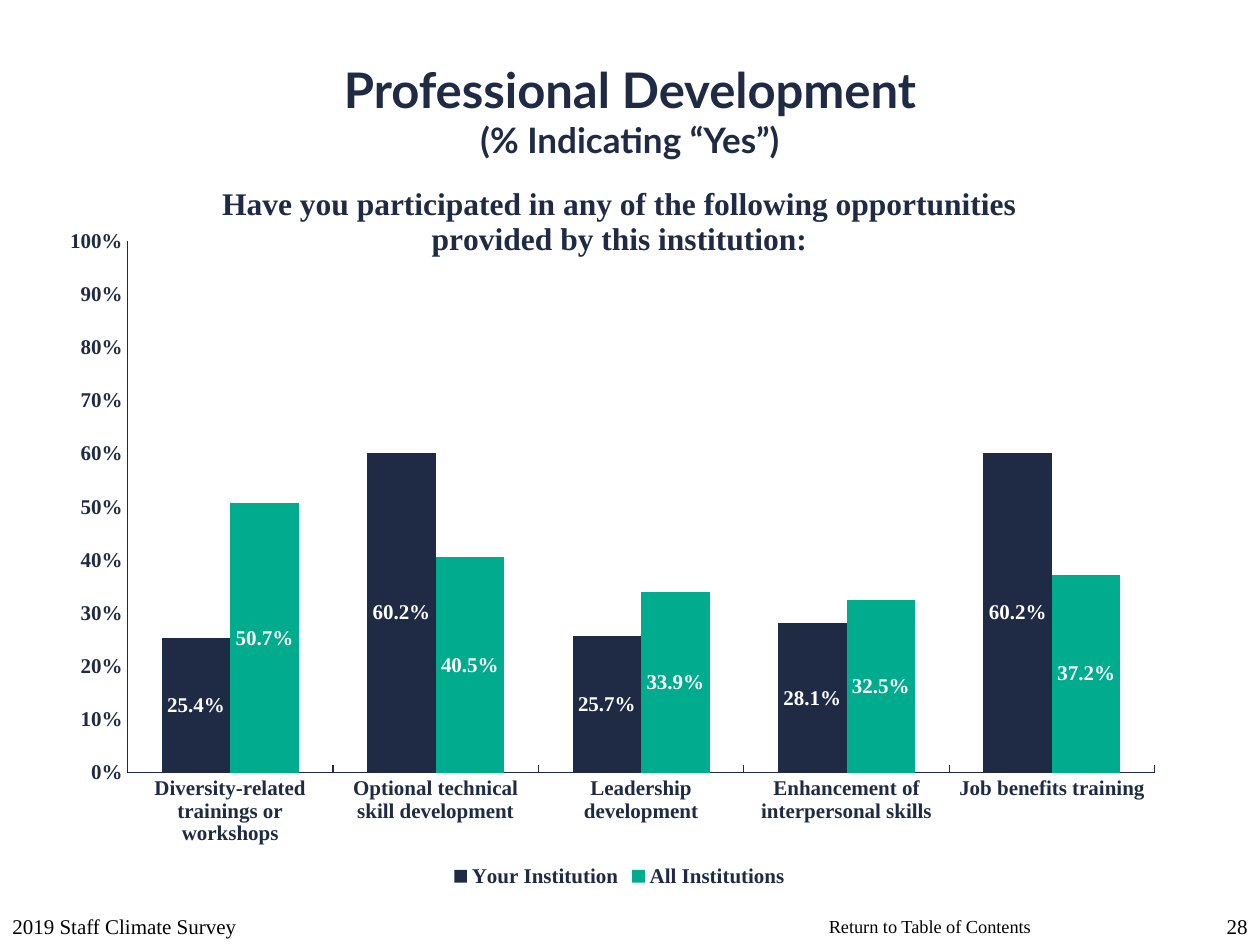
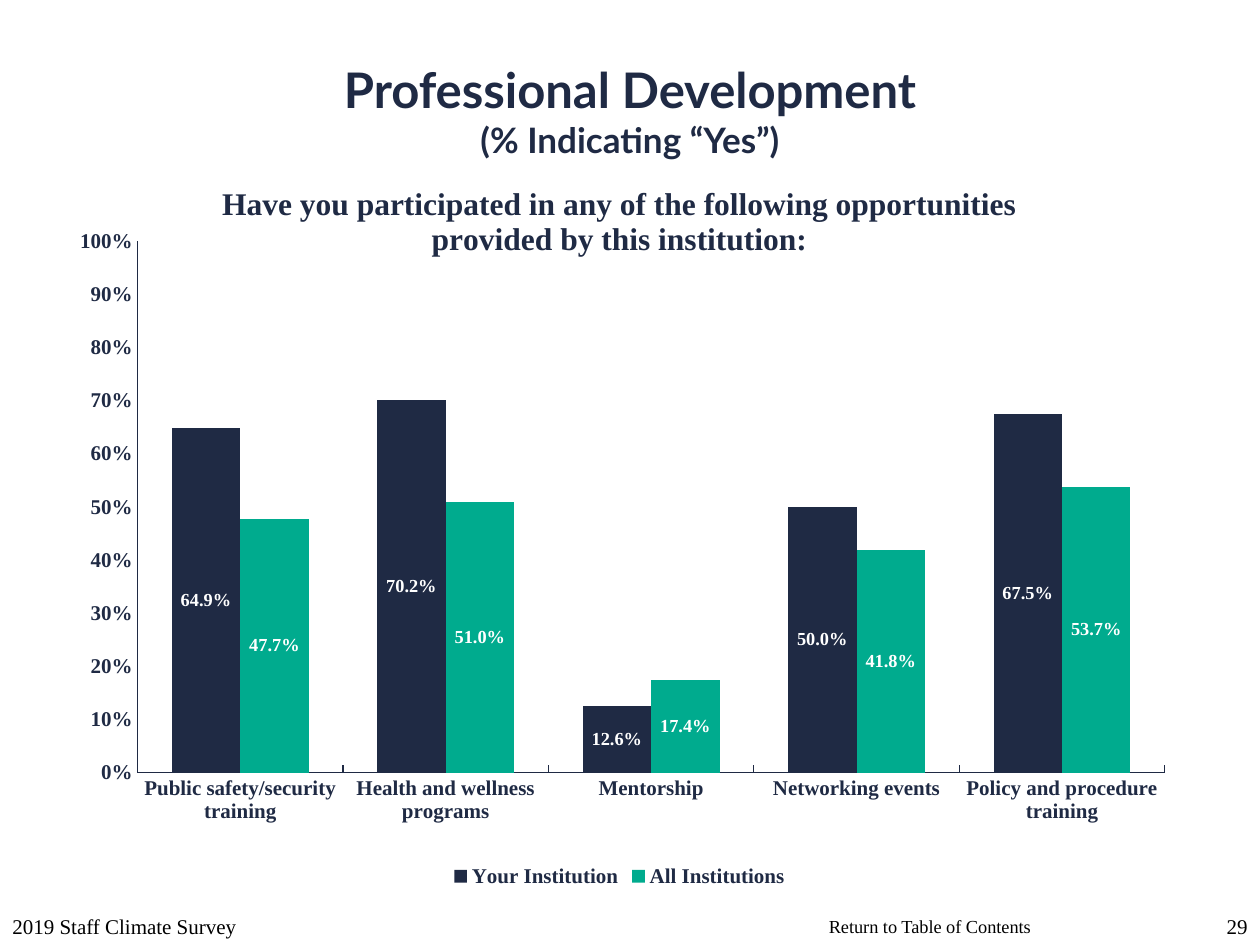
from lxml import etree
from pptx import Presentation
from pptx.chart.data import CategoryChartData
from pptx.dml.color import RGBColor
from pptx.enum.chart import (
    XL_CHART_TYPE, XL_LABEL_POSITION, XL_LEGEND_POSITION, XL_TICK_MARK)
from pptx.enum.text import MSO_ANCHOR, PP_ALIGN
from pptx.oxml.ns import qn
from pptx.util import Pt

NAVY = RGBColor(0x1F, 0x2A, 0x44)
GREEN = RGBColor(0x00, 0xAB, 0x8E)
WHITE = RGBColor(0xFF, 0xFF, 0xFF)
BLACK = RGBColor(0x00, 0x00, 0x00)
HEADING_FONT = "Lato"
BODY_FONT = "Times New Roman"

COLUMNS = XL_CHART_TYPE.COLUMN_CLUSTERED
LABEL_CENTER = XL_LABEL_POSITION.CENTER
LEGEND_BOTTOM = XL_LEGEND_POSITION.BOTTOM
TICK_IN, TICK_NONE = XL_TICK_MARK.INSIDE, XL_TICK_MARK.NONE
TOP, MIDDLE, BOTTOM = MSO_ANCHOR.TOP, MSO_ANCHOR.MIDDLE, MSO_ANCHOR.BOTTOM
LEFT, CENTER, RIGHT = PP_ALIGN.LEFT, PP_ALIGN.CENTER, PP_ALIGN.RIGHT

SLIDE_WIDTH, SLIDE_HEIGHT = 720, 540
TITLE_BOX = (0, 18, 720, 90)
CHART_BOX = (36, 90, 636, 420)
FOOTER_BOX = (0, 504, 720, 36)

HEADING_LINES = [("Professional Development", 28), ("(% Indicating “Yes”)", 20)]
QUESTION = ("Have you participated in any of the following opportunities "
            "provided by this institution:")
SURVEY = "2019 Staff Climate Survey"
CONTENTS_NOTE = "Return to Table of Contents"
SERIES_COLORS = {"Your Institution": NAVY, "All Institutions": GREEN}

PAGES = [
    {
        "number": 28,
        "plot_left": 0.058,
        "label_size": 12,
        "results": {
            "Diversity-related trainings or workshops": (0.254, 0.507),
            "Optional technical skill development": (0.602, 0.405),
            "Leadership development": (0.257, 0.339),
            "Enhancement of interpersonal skills": (0.281, 0.325),
            "Job benefits training": (0.602, 0.372),
        },
    },
    {
        "number": 29,
        "plot_left": 0.067,
        "label_size": 10.5,
        "results": {
            "Public safety/security training": (0.649, 0.477),
            "Health and wellness programs": (0.702, 0.51),
            "Mentorship": (0.126, 0.174),
            "Networking events": (0.5, 0.418),
            "Policy and procedure training": (0.675, 0.537),
        },
    },
]


def apply_format(target, values):
    """Set each named attribute on the target."""
    for name, value in values.items():
        setattr(target, name, value)


def style_font(font, size, color=NAVY, bold=True, face=BODY_FONT):
    """Give a font its face, size, weight and colour."""
    apply_format(font, {"name": face, "size": Pt(size), "bold": bold})
    font.color.rgb = color


def add_heading(slide, box):
    """Fill the title placeholder with the two heading lines."""
    heading = slide.shapes.title
    apply_format(heading, dict(zip(("left", "top", "width", "height"), map(Pt, box))))
    frame = heading.text_frame
    apply_format(frame, {"word_wrap": True, "vertical_anchor": MIDDLE})
    paragraph = frame.paragraphs[0]
    paragraph.alignment = CENTER
    for index, (line, size) in enumerate(HEADING_LINES):
        if index:
            paragraph.add_line_break()
        run = paragraph.add_run()
        run.text = line
        style_font(run.font, size, face=HEADING_FONT)


def place_plot(chart, left):
    """Fix the inner plot area as fractions of the chart."""
    plot_area = chart.element.find(".//" + qn("c:plotArea"))
    for old_layout in plot_area.findall(qn("c:layout")):
        plot_area.remove(old_layout)
    layout = etree.Element(qn("c:layout"))
    manual = etree.SubElement(layout, qn("c:manualLayout"))
    settings = {"layoutTarget": "inner", "xMode": "edge", "yMode": "edge",
                "x": left, "y": 0.114, "w": 0.923, "h": 0.723}
    for tag, value in settings.items():
        etree.SubElement(manual, qn("c:" + tag)).set("val", str(value))
    plot_area.insert(0, layout)


def style_axes(chart):
    """Format the category axis and the percentage axis."""
    for axis, tick in ((chart.category_axis, TICK_IN), (chart.value_axis, TICK_NONE)):
        apply_format(axis, {"major_tick_mark": tick, "minor_tick_mark": TICK_NONE,
                            "has_major_gridlines": False})
        style_font(axis.tick_labels.font, 12)
        axis.format.line.color.rgb = NAVY
        axis.format.line.width = Pt(0.75)
    apply_format(chart.value_axis, {"minimum_scale": 0, "maximum_scale": 1,
                                    "major_unit": 0.1})
    apply_format(chart.value_axis.tick_labels,
                 {"number_format": "0%", "number_format_is_linked": False})


def style_series(series, color, label_size):
    """Colour one institution group and label its columns."""
    series.format.fill.solid()
    series.format.fill.fore_color.rgb = color
    series.invert_if_negative = False
    labels = series.data_labels
    apply_format(labels, {"show_value": True, "position": LABEL_CENTER,
                          "number_format": "0.0%", "number_format_is_linked": False})
    style_font(labels.font, label_size, WHITE)


def add_results_chart(slide, box, page):
    """Draw the column chart comparing both institution groups."""
    data = CategoryChartData(number_format="0.0%")
    data.categories = list(page["results"])
    for name, values in zip(SERIES_COLORS, zip(*page["results"].values())):
        data.add_series(name, values)
    chart = slide.shapes.add_chart(COLUMNS, *map(Pt, box), data).chart
    style_font(chart.font, 10)

    question = chart.chart_title.text_frame
    question.text = QUESTION
    style_font(question.paragraphs[0].runs[0].font, 18)

    chart.has_legend = True
    apply_format(chart.legend, {"position": LEGEND_BOTTOM, "include_in_layout": False})
    style_font(chart.legend.font, 12)

    plot = chart.plots[0]
    apply_format(plot, {"gap_width": 100, "overlap": 0, "vary_by_categories": False})
    for series in plot.series:
        style_series(series, SERIES_COLORS[series.name], page["label_size"])
    style_axes(chart)
    place_plot(chart, page["plot_left"])


def add_footer(slide, box, number):
    """Place the survey name, contents note and page number in the footer."""
    left, top, width, height = box
    parts = [
        (CONTENTS_NOTE, 466.5, 15.5, 131, 20.5, 10.5, LEFT, TOP, False),
        (SURVEY, 0, 0, 228, height, 12, LEFT, BOTTOM, True),
        (str(number), width - 36, 0, 36, height, 12, RIGHT, BOTTOM, True),
    ]
    for text, dx, dy, part_width, part_height, size, align, anchor, wrap in parts:
        part = slide.shapes.add_textbox(
            Pt(left + dx), Pt(top + dy), Pt(part_width), Pt(part_height))
        frame = part.text_frame
        apply_format(frame, {"text": text, "word_wrap": wrap, "vertical_anchor": anchor})
        paragraph = frame.paragraphs[0]
        paragraph.alignment = align
        style_font(paragraph.runs[0].font, size, BLACK, bold=False)


def add_results_slide(deck, page):
    """Build one survey results slide."""
    slide = deck.slides.add_slide(deck.slide_layouts.get_by_name("Title Only"))
    add_heading(slide, TITLE_BOX)
    add_results_chart(slide, CHART_BOX, page)
    add_footer(slide, FOOTER_BOX, page["number"])


def main():
    """Create and save the deck."""
    deck = Presentation()
    apply_format(deck, {"slide_width": Pt(SLIDE_WIDTH), "slide_height": Pt(SLIDE_HEIGHT)})
    for page in PAGES:
        add_results_slide(deck, page)
    deck.save("out.pptx")


if __name__ == "__main__":
    main()
